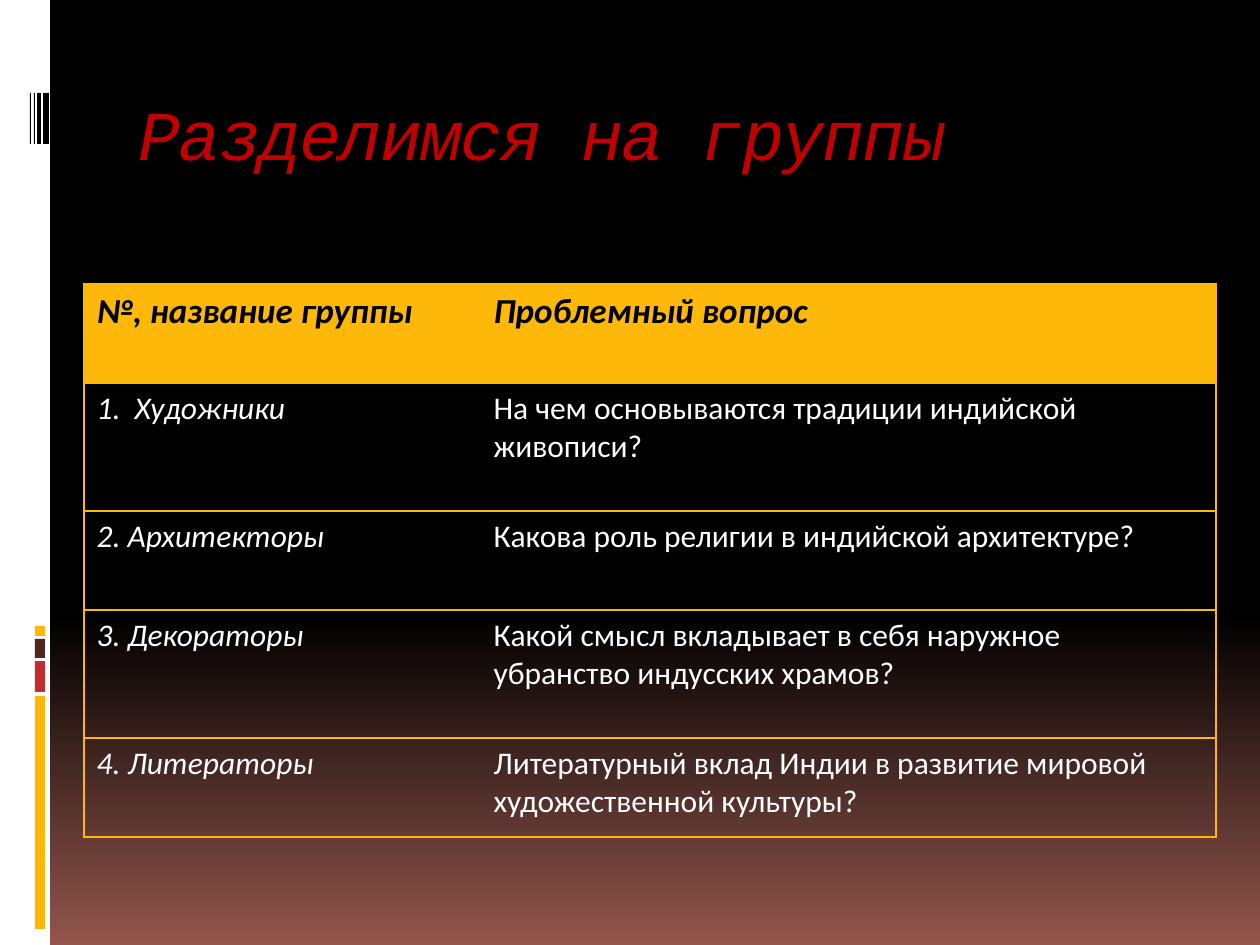
from lxml import etree
from pptx import Presentation
from pptx.dml.color import RGBColor
from pptx.enum.shapes import MSO_SHAPE
from pptx.enum.text import MSO_ANCHOR, PP_ALIGN
from pptx.oxml.ns import qn
from pptx.util import Emu, Pt

RECT = MSO_SHAPE.RECTANGLE
MIDDLE = MSO_ANCHOR.MIDDLE
LEFT = PP_ALIGN.LEFT

# Content
TITLE = "Разделимся на группы"
HEAD = ("№, название группы", "Проблемный вопрос")
GROUPS = [
    ("1.  Художники", "На чем основываются традиции индийской живописи?"),
    ("2. Архитекторы", "Какова роль религии в индийской архитектуре?"),
    ("3. Декораторы", "Какой смысл вкладывает в себя наружное убранство индусских храмов?"),
    ("4. Литераторы", "Литературный вклад Индии в развитие мировой художественной культуры?"),
]
GOLD, BLACK, WHITE = "FEB80A", "000000", "FFFFFF"
# Side bars: top, height, colour
BARS = [(696, 233, GOLD), (661, 31, "C32D2E"), (639, 19, "4F271C"), (626, 10, GOLD)]
# Thin stripes: left, width
STRIPES = [(43, 6), (37, 4), (34, 1), (30, 1)]
COLS = (397, 735)
ROWS = (99, 128, 99, 128, 99)


def px(n):
    return Emu(round(n * 914400 / 126))


def rgb(code):
    return RGBColor.from_string(code)


def box(x, y, w, h, color):
    shape = slide.shapes.add_shape(RECT, px(x), px(y), px(w), px(h))
    shape.shadow.inherit = False
    shape.fill.solid()
    shape.fill.fore_color.rgb = rgb(color)
    shape.line.fill.background()


def write(frame, text, size, color, font="Calibri", bold=False, italic=False):
    para = frame.paragraphs[0]
    para.alignment = LEFT
    run = para.add_run()
    run.text = text
    run.font.name = font
    run.font.size = Pt(size)
    run.font.bold = bold
    run.font.italic = italic
    run.font.color.rgb = rgb(color)
    return run


def edge(cell, side, color):
    """Draw one cell border, or hide it when color is None."""
    line = etree.SubElement(cell._tc.get_or_add_tcPr(), qn("a:ln" + side), w="11938")
    if color:
        fill = etree.SubElement(line, qn("a:solidFill"))
        etree.SubElement(fill, qn("a:srgbClr"), val=color)
    else:
        etree.SubElement(line, qn("a:noFill"))


deck = Presentation()
deck.slide_width, deck.slide_height = px(1260), px(945)
slide = deck.slides.add_slide(deck.slide_layouts[5])

# Background: black down to 65 %, then fading to red-brown
back = slide.background.fill
back.gradient()
back.gradient_angle = 270
for stop, (pos, color) in zip(back.gradient_stops, [(0.65, BLACK), (1, "93564D")]):
    stop.position = pos
    stop.color.rgb = rgb(color)

# Side strip
box(0, 0, 50, 945, WHITE)
for y, h, color in BARS:
    box(35, y, 10, h, color)
for x, w in STRIPES:
    box(x, 93, w, 51, BLACK)

# Title
title = slide.shapes.title
title.left, title.top, title.width, title.height = px(126), px(70), px(1071), px(126)
title.text_frame.vertical_anchor = MIDDLE
run = write(title.text_frame, TITLE, 40, "C00000", font="Courier New", italic=True)
run.font._element.set("spc", "-100")

# Table
table = slide.shapes.add_table(len(ROWS), len(COLS), px(84), px(284),
                               px(sum(COLS)), px(sum(ROWS))).table
table.horz_banding = False
for col, w in zip(table.columns, COLS):
    col.width = px(w)
for row, h in zip(table.rows, ROWS):
    row.height = px(h)

for r, texts in enumerate([HEAD] + GROUPS):
    for c, text in enumerate(texts):
        cell = table.cell(r, c)
        head, first = r == 0, c == 0
        sides = {"L": GOLD if first else None, "R": None if first else GOLD,
                 "T": GOLD, "B": GOLD}
        for side, color in sides.items():
            edge(cell, side, color)
        if head:
            cell.fill.solid()
            cell.fill.fore_color.rgb = rgb(GOLD)
        else:
            cell.fill.background()
        write(cell.text_frame, text, 20 if head else 18, BLACK if head else WHITE,
              bold=head, italic=head or first)

deck.save("out.pptx")
